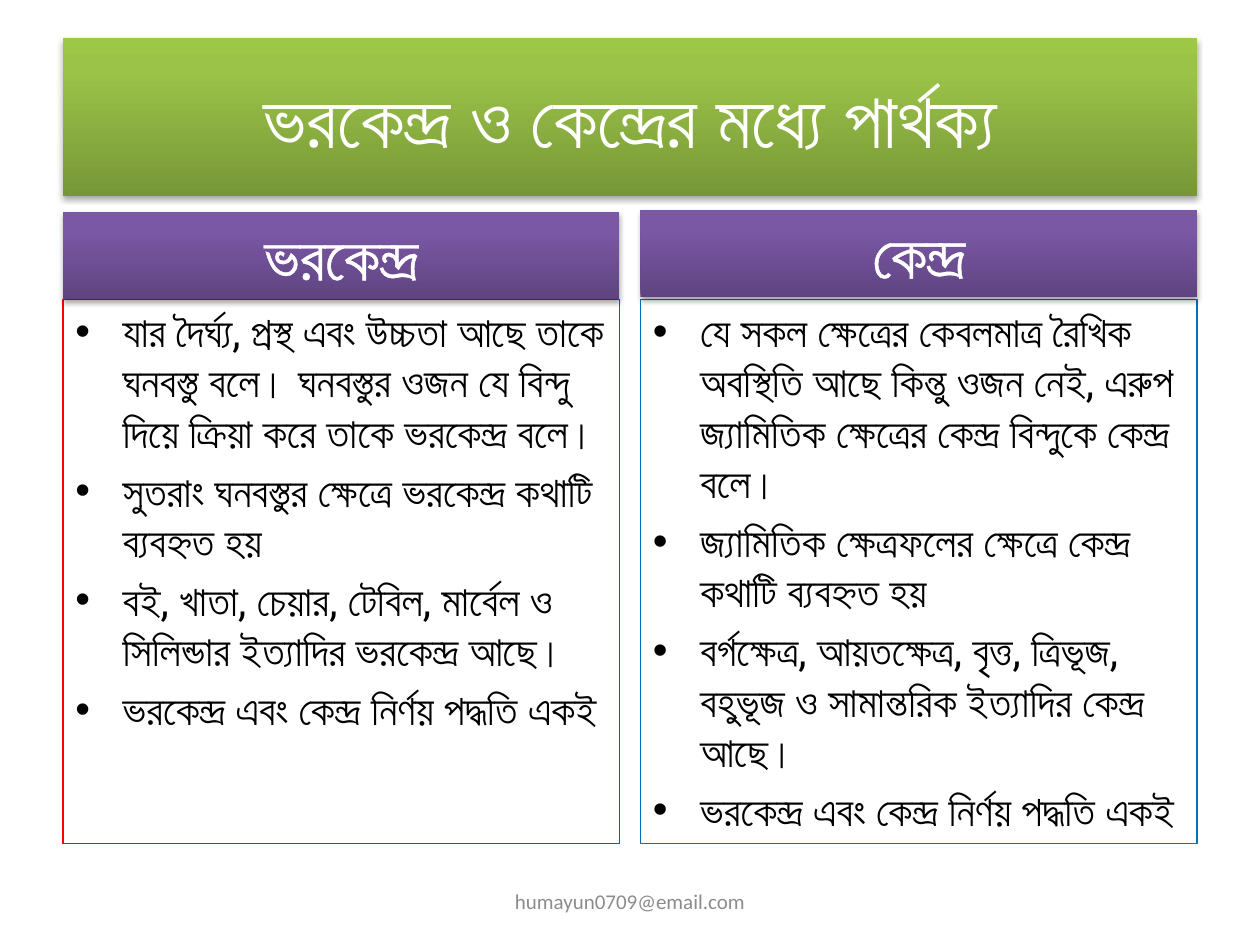
from copy import deepcopy

from pptx import Presentation
from pptx.dml.color import RGBColor
from pptx.enum.shapes import MSO_SHAPE as Shape
from pptx.enum.text import MSO_ANCHOR as Anchor, PP_ALIGN as Align
from pptx.oxml import parse_xml
from pptx.oxml.ns import nsdecls, qn
from pptx.util import Pt

COLORS = {"white": "FFFFFF", "black": "000000", "gray": "8C8C8C",
          "red": "FF0000", "blue": "0070C0"}
GREEN = ((0, "779737"), (0.8, "9BC348"), (1, "9DC746"))
PURPLE = ((0, "5F4480"), (0.8, "7B58A6"), (1, "7C57A8"))
BENGALI = "Roboto"
MARGIN, COLUMN_WIDTH, COLUMN_GAP = 36, 318, 12

TITLE = "ভরকেন্দ্র ও কেন্দ্রের মধ্যে পার্থক্য"
SAME_METHOD = "ভরকেন্দ্র এবং কেন্দ্র নির্ণয় পদ্ধতি একই"
# Heading, top of heading, border colour, points
COLUMNS = (
    ("ভরকেন্দ্র", 121, "red", (
        "যার দৈর্ঘ্য, প্রস্থ এবং উচ্চতা আছে তাকে ঘনবস্তু বলে। ঘনবস্তুর ওজন যে বিন্দু দিয়ে ক্রিয়া করে তাকে ভরকেন্দ্র বলে।",
        "সুতরাং ঘনবস্তুর ক্ষেত্রে ভরকেন্দ্র কথাটি ব্যবহ্নত হয়",
        "বই, খাতা, চেয়ার, টেবিল, মার্বেল ও সিলিন্ডার ইত্যাদির ভরকেন্দ্র আছে।",
        SAME_METHOD)),
    ("কেন্দ্র", 120, "blue", (
        "যে সকল ক্ষেত্রের কেবলমাত্র রৈখিক অবস্থিতি আছে কিন্তু ওজন নেই, এরুপ জ্যামিতিক ক্ষেত্রের কেন্দ্র বিন্দুকে কেন্দ্র বলে।",
        "জ্যামিতিক ক্ষেত্রফলের ক্ষেত্রে কেন্দ্র কথাটি ব্যবহ্নত হয়",
        "বর্গক্ষেত্র, আয়তক্ষেত্র, বৃত্ত, ত্রিভূজ, বহুভূজ ও সামান্তরিক ইত্যাদির কেন্দ্র আছে।",
        SAME_METHOD)),
)


def apply(target, values):
    for name, value in values.items():
        setattr(target, name, value)


def place(shape, left, top, width, height):
    apply(shape, {"left": Pt(left), "top": Pt(top),
                  "width": Pt(width), "height": Pt(height)})


def add_rectangle(slide, *box):
    shape = slide.shapes.add_shape(Shape.RECTANGLE, *map(Pt, box))
    shape.shadow.inherit = False
    return shape


def fill_gradient(shape, stops):
    """Fill upwards with three stops."""
    shape.fill.gradient()
    shape.fill.gradient_angle = 90
    stop_list = shape.element.spPr.find(".//" + qn("a:gsLst"))
    stop_list.append(deepcopy(stop_list[-1]))
    for stop, (position, color) in zip(shape.fill.gradient_stops, stops):
        stop.position = position
        stop.color.rgb = RGBColor.from_string(color)


def add_shadow(shape):
    shape.shadow.inherit = False
    shape.element.spPr.find(qn("a:effectLst")).append(parse_xml(
        f'<a:outerShdw {nsdecls("a")} blurRad="{Pt(3.1)}" dist="{Pt(1.8)}" '
        'dir="5400000" rotWithShape="0"><a:srgbClr val="000000">'
        '<a:alpha val="35000"/></a:srgbClr></a:outerShdw>'))


def write(shape, texts, size, color, font=BENGALI, anchor=Anchor.MIDDLE,
          align=Align.CENTER, space=0):
    frame = shape.text_frame
    apply(frame, {"word_wrap": True, "vertical_anchor": anchor})
    frame.text = "\n".join(texts)
    for paragraph in frame.paragraphs:
        apply(paragraph, {"alignment": align, "space_before": Pt(space)})
        run = paragraph.runs[0]
        apply(run.font, {"size": Pt(size), "name": font, "bold": False})
        run.font.color.rgb = RGBColor.from_string(COLORS[color])
        # Bengali uses the complex-script font
        run.font._element.append(parse_xml(
            f'<a:cs {nsdecls("a")} typeface="{font}"/>'))


def add_bullets(shape, indent):
    for paragraph in shape.text_frame.paragraphs:
        properties = paragraph._p.get_or_add_pPr()
        properties.set("marL", str(Pt(indent)))
        properties.set("indent", str(Pt(-indent)))
        for tag in ('buFont {} typeface="Arial"', 'buChar {} char="•"'):
            properties.append(parse_xml(f'<a:{tag.format(nsdecls("a"))}/>'))


def outline_text(shape, width, color):
    run = shape.text_frame.paragraphs[0].runs[0]
    run.font._element.insert(0, parse_xml(
        f'<a:ln {nsdecls("a")} w="{Pt(width)}"><a:solidFill>'
        f'<a:srgbClr val="{COLORS[color]}"/></a:solidFill></a:ln>'))


def add_title(slide):
    title = slide.shapes.title
    place(title, MARGIN, 22, 648, 90)
    fill_gradient(title, GREEN)
    add_shadow(title)
    write(title, [TITLE], 44, "white")


def add_column(slide, left, heading, top, border, points):
    # Bordered list
    body = add_rectangle(slide, left, 171, COLUMN_WIDTH, 311)
    body.fill.background()
    body.line.color.rgb = RGBColor.from_string(COLORS[border])
    body.line.width = Pt(0.75)
    write(body, points, 24, "black", anchor=Anchor.TOP, align=Align.LEFT, space=4.8)
    add_bullets(body, 27)
    # Heading band
    band = add_rectangle(slide, left, top, COLUMN_WIDTH, 50)
    fill_gradient(band, PURPLE)
    band.line.fill.background()
    add_shadow(band)
    write(band, [heading], 36, "white", anchor=Anchor.BOTTOM, space=7.2)
    outline_text(band, 1.45, "white")


def add_footer(slide):
    footer = slide.shapes.add_textbox(Pt(246), Pt(500.5), Pt(228), Pt(29))
    write(footer, ["humayun0709@email.com"], 12, "gray", font="Calibri")


def main():
    presentation = Presentation()
    apply(presentation, {"slide_width": Pt(720), "slide_height": Pt(540)})
    slide = presentation.slides.add_slide(presentation.slide_layouts[5])
    add_title(slide)
    for index, column in enumerate(COLUMNS):
        add_column(slide, MARGIN + index * (COLUMN_WIDTH + COLUMN_GAP), *column)
    add_footer(slide)
    presentation.save("out.pptx")


if __name__ == "__main__":
    main()
